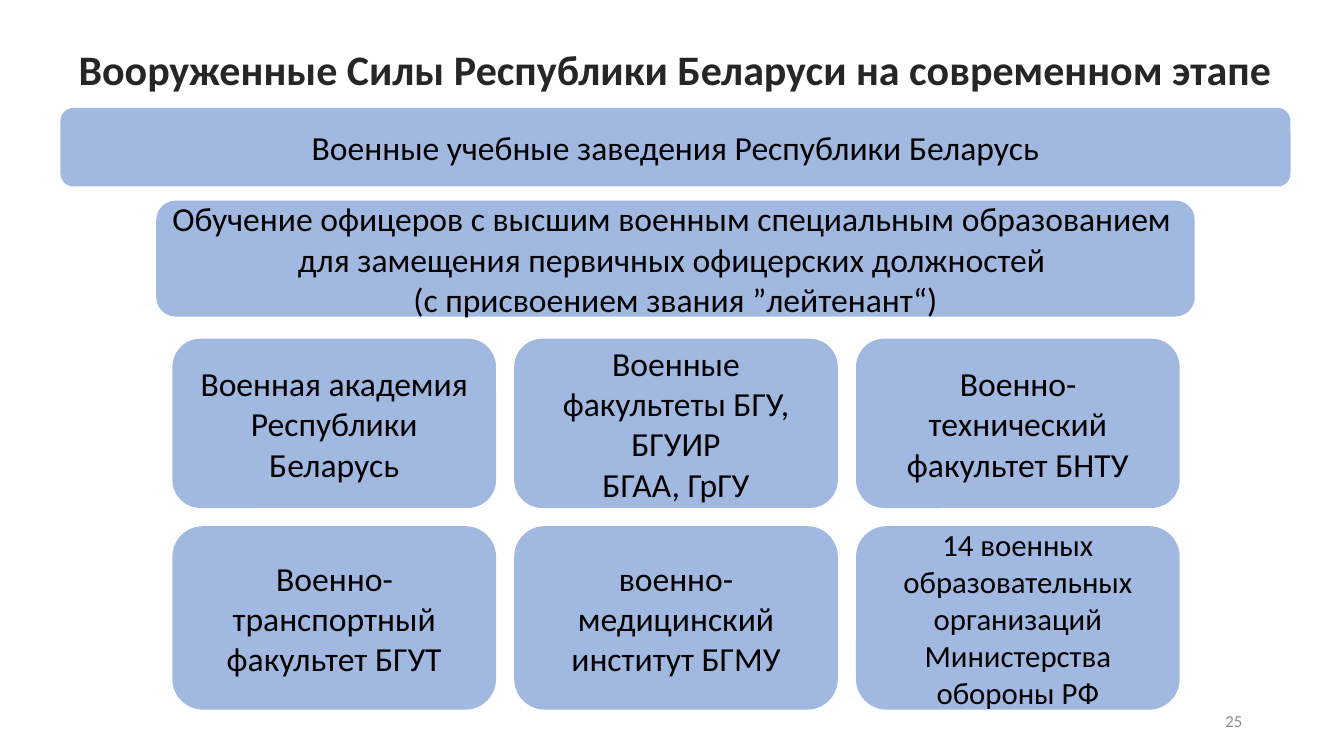
"""Slide on the military schools of the Republic of Belarus."""
from lxml import etree
from pptx import Presentation
from pptx.dml.color import RGBColor
from pptx.enum import shapes, text
from pptx.oxml.ns import qn
from pptx.util import Inches, Pt


def write(frame, words, size, color, align=text.PP_ALIGN.CENTER, bold=False):
    frame.text = words
    frame.word_wrap = True
    frame.vertical_anchor = text.MSO_ANCHOR.MIDDLE
    for paragraph in frame.paragraphs:
        paragraph.alignment = align
        for run in paragraph.runs:
            run.font.name = "Calibri"
            run.font.size = Pt(size)
            run.font.bold = bold
            run.font.color.rgb = RGBColor.from_string(color)


def add_panel(slide, left, top, width, height, words, size=24):
    panel = slide.shapes.add_shape(
        shapes.MSO_SHAPE.ROUNDED_RECTANGLE,
        Inches(left), Inches(top), Inches(width), Inches(height))
    panel.shadow.inherit = False
    panel.line.fill.background()
    panel.fill.solid()
    panel.fill.fore_color.rgb = RGBColor.from_string("4472C4")
    tint = panel.fill._xPr.find(qn("a:solidFill"))[0]
    etree.SubElement(tint, qn("a:alpha")).set("val", "50000")
    write(panel.text_frame, words, size, "000000")


deck = Presentation()
deck.slide_width, deck.slide_height = Inches(13.33), Inches(7.5)
slide = deck.slides.add_slide(deck.slide_layouts[6])

page_number = slide.shapes.add_textbox(Inches(9.42), Inches(6.95), Inches(3), Inches(0.4))
write(page_number.text_frame, "25", 12, "8C8C8C", text.PP_ALIGN.RIGHT)

title = slide.shapes.add_textbox(Inches(0.47), Inches(0.38), Inches(12.46), Inches(0.67))
write(title.text_frame, "Вооруженные Силы Республики Беларуси на современном этапе",
      30, "262626", bold=True)
title.text_frame.paragraphs[0].line_spacing = 0.9

add_panel(slide, 0.6, 1.07, 12.2, 0.78, "Военные учебные заведения Республики Беларусь")
add_panel(slide, 1.55, 1.99, 10.3, 1.15,
          "Обучение офицеров с высшим военным специальным образованием \v"
          "для замещения первичных офицерских должностей \v"
          "(с присвоением звания ”лейтенант“)")

school_rows = [
    (3.36, 1.68, [("Военная академия Республики Беларусь", 24),
                  ("Военные факультеты БГУ, БГУИР\nБГАА, ГрГУ", 24),
                  ("Военно-технический факультет БНТУ", 24)]),
    (5.22, 1.82, [("Военно-транспортный факультет БГУТ", 24),
                  ("военно-медицинский институт БГМУ", 24),
                  ("14 военных образовательных организаций Министерства обороны РФ", 22)]),
]
for top, height, schools in school_rows:
    for column, (school, size) in enumerate(schools):
        add_panel(slide, 1.71 + 3.39 * column, top, 3.21, height, school, size)

deck.save("out.pptx")
